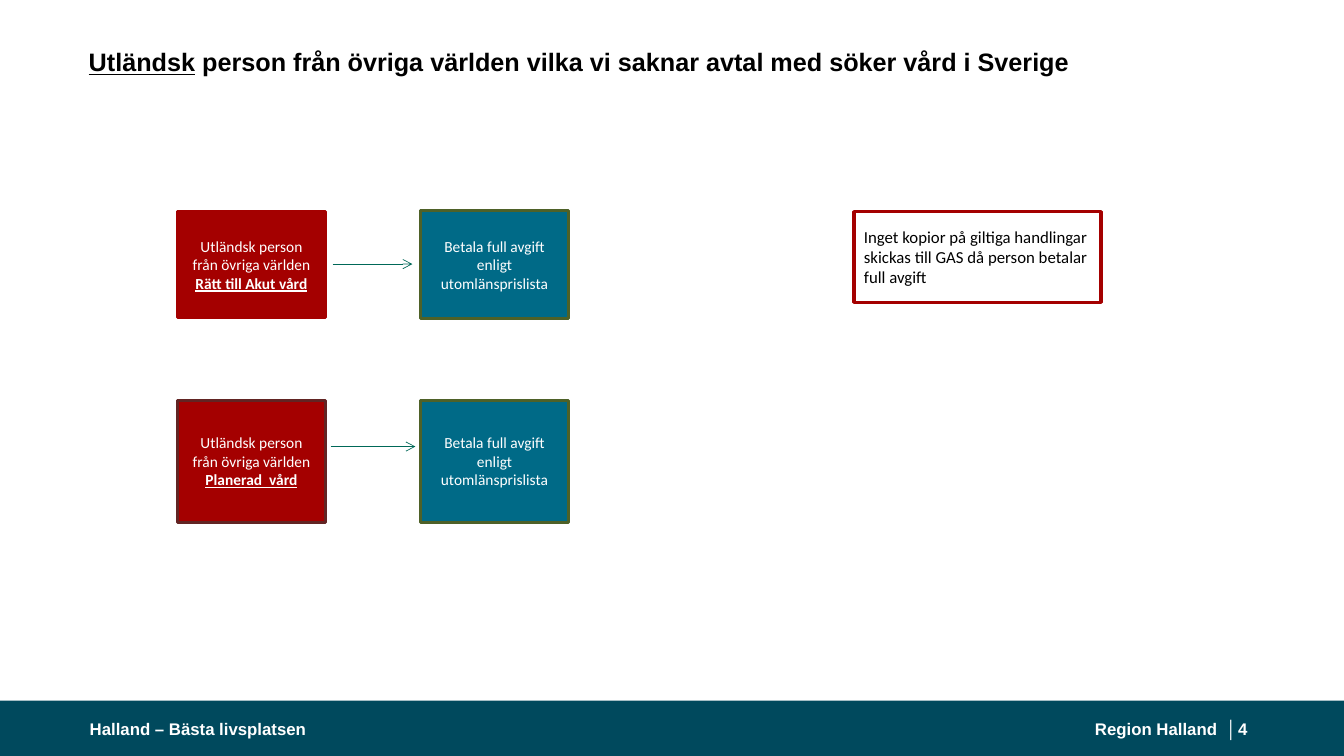
from pptx import Presentation
from pptx.dml.color import RGBColor
from pptx.enum.shapes import MSO_CONNECTOR as CONN, MSO_SHAPE as SHAPE
from pptx.enum.text import MSO_ANCHOR as ANCHOR, PP_ALIGN as ALIGN
from pptx.oxml.ns import qn
from pptx.util import Pt
from lxml import etree

PX = 9144  # 100 px to the inch
COLORS = {
    "white": "FFFFFF", "black": "000000", "footer": "00495D", "red": "A40000",
    "maroon": "622423", "blue": "006A87", "olive": "4E6128", "arrow": "006858",
}
C = {name: RGBColor.from_string(value) for name, value in COLORS.items()}

prs = Presentation()
prs.slide_width, prs.slide_height = 1333 * PX, 750 * PX
slide = prs.slides.add_slide(prs.slide_layouts[6])
shapes = slide.shapes


def add_box(at, fill, line=None, width=2):
    s = shapes.add_shape(SHAPE.RECTANGLE, *[n * PX for n in at])
    s.shadow.inherit = False
    s.fill.solid()
    s.fill.fore_color.rgb = C[fill]
    if line:
        s.line.color.rgb = C[line]
        s.line.width = Pt(width)
    else:
        s.line.fill.background()
    return s


def write(s, text, size, color, font, align, bold=False, rest=""):
    tf = s.text_frame
    tf.word_wrap = True
    tf.vertical_anchor = ANCHOR.MIDDLE
    p = tf.paragraphs[0]
    p.text = text
    p.alignment = align
    if rest:
        p.add_run().text = rest
    for r in p.runs:
        r.font.size, r.font.name, r.font.bold = Pt(size), font, bold
        r.font.color.rgb = C[color]
    return p


# Footer band
add_box((0, 695, 1333, 55), "footer")

# Title and footer texts
labels = [
    ((88, 9, 1158, 108), "Utländsk", 18, "black", ALIGN.LEFT,
     " person från övriga världen vilka vi saknar avtal med söker vård i Sverige"),
    ((1070, 706, 157, 35), "Region Halland  │", 12, "white", ALIGN.RIGHT, ""),
    ((89, 706, 450, 35), "Halland – Bästa livsplatsen", 12, "white", ALIGN.LEFT, ""),
    ((1228, 706, 24, 35), "4", 12, "white", ALIGN.LEFT, ""),
]
for at, text, size, color, align, rest in labels:
    s = shapes.add_textbox(*[n * PX for n in at])
    tf = s.text_frame
    tf.margin_left = tf.margin_right = tf.margin_top = tf.margin_bottom = 0
    p = write(s, text, size, color, "Arial", align, True, rest)
    if rest:
        p.line_spacing = 0.9
        p.runs[0].font.underline = True

# Two care paths: person, arrow, payment
paths = [
    ("Rätt till Akut vård", "red", (210, 105), (209, 107), (330, 409, 262)),
    ("Planerad  vård", "maroon", (397, 121), (397, 121), (328, 412, 443)),
]
for care, border, person, payment, (x1, x2, y) in paths:
    s = add_box((176, person[0], 147, person[1]), "red", border)
    p = write(s, "Utländsk person från övriga världen\v" + care,
              11, "white", "Calibri", ALIGN.CENTER)
    p.runs[1].font.bold = p.runs[1].font.underline = True

    s = add_box((417, payment[0], 147, payment[1]), "blue", "olive")
    write(s, "Betala full avgift enligt utomlänsprislista",
          11, "white", "Calibri", ALIGN.CENTER)

    arrow = shapes.add_connector(CONN.STRAIGHT, x1 * PX, y * PX, x2 * PX, y * PX)
    arrow.line.color.rgb = C["arrow"]
    arrow.line.width = Pt(0.5)
    etree.SubElement(arrow.line._get_or_add_ln(), qn("a:tailEnd"), type="arrow")
    etree.SubElement(arrow._element.spPr, qn("a:effectLst"))

# Note on documents
s = add_box((847, 210, 245, 90), "white", "red", 2.25)
write(s, "Inget kopior på giltiga handlingar skickas till GAS då person betalar full avgift",
      12, "black", "Calibri", ALIGN.LEFT)

prs.save("out.pptx")
